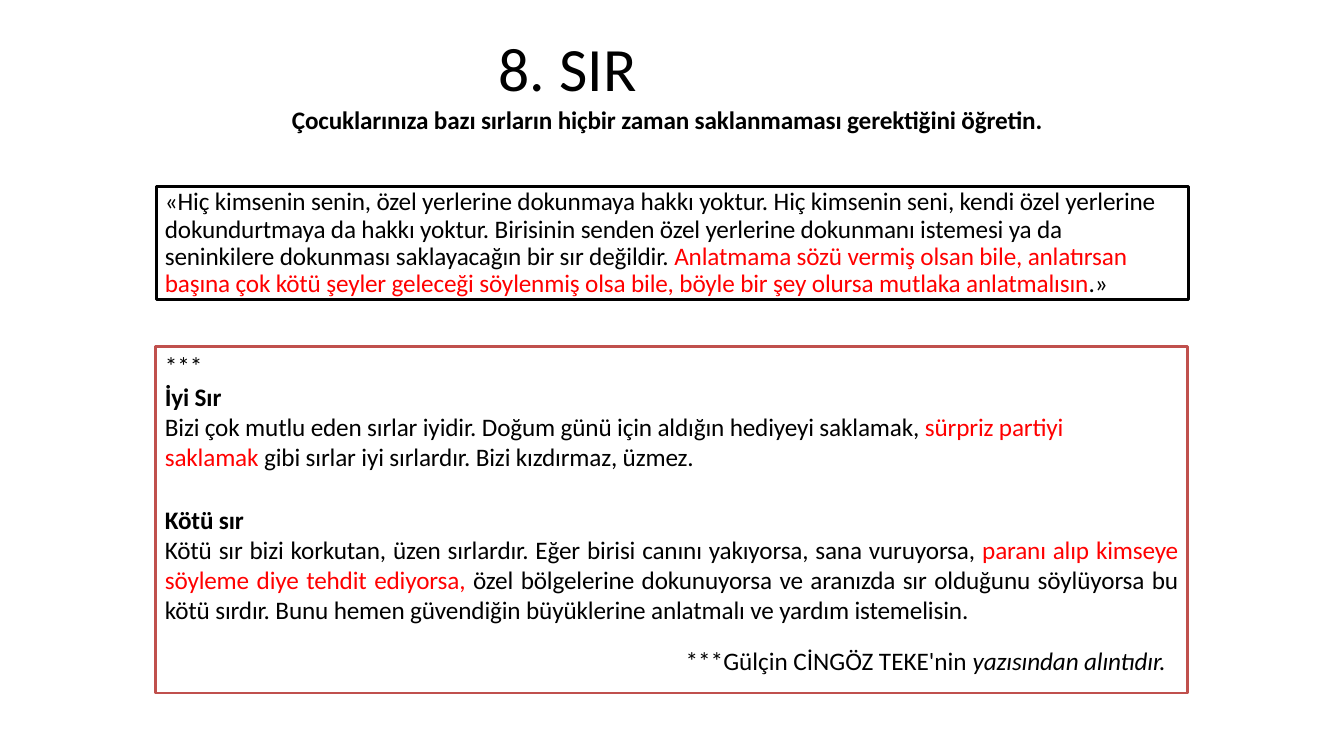
"""Builds the "8. SIR" slide about good and bad secrets."""
from pptx import Presentation
from pptx.dml.color import RGBColor
from pptx.enum.shapes import MSO_SHAPE as SHAPE
from pptx.enum.text import MSO_ANCHOR as ANCHOR, MSO_AUTO_SIZE as AUTO, PP_ALIGN as ALIGN
from pptx.util import Pt

PX = 9525
BLACK = RGBColor(0x00, 0x00, 0x00)
RED = RGBColor(0xFF, 0x00, 0x00)
BRICK = RGBColor(0xC0, 0x50, 0x4D)


def add_text(p, text, size=18, color=BLACK, bold=False, italic=False, spacing=-10):
    r = p.add_run()
    r.text = text
    r.font.name = "Calibri"
    r.font.size = Pt(size)
    r.font.color.rgb = color
    r.font.bold = bold
    r.font.italic = italic
    r._r.get_or_add_rPr().set("spc", str(spacing))


def set_frame(tf, left=1, top=0, anchor=ANCHOR.TOP):
    tf.word_wrap = True
    tf.auto_size = AUTO.NONE
    tf.vertical_anchor = anchor
    tf.margin_left, tf.margin_top = left * PX, top * PX
    tf.margin_right = tf.margin_bottom = 0
    tf.paragraphs[0].alignment = ALIGN.LEFT
    return tf


prs = Presentation()
prs.slide_width, prs.slide_height = 1280 * PX, 720 * PX
s = prs.slides.add_slide(prs.slide_layouts[5])

title = s.shapes.title
title.left, title.top, title.width, title.height = 474 * PX, 28 * PX, 305 * PX, 71 * PX
tf = set_frame(title.text_frame, anchor=ANCHOR.MIDDLE)
add_text(tf.paragraphs[0], "8. SIR", size=44, spacing=0)

subtitle = s.shapes.add_textbox(277 * PX, 99 * PX, 727 * PX, 29 * PX)
tf = set_frame(subtitle.text_frame)
add_text(tf.paragraphs[0],
         "Çocuklarınıza bazı sırların hiçbir zaman saklanmaması gerektiğini öğretin.",
         bold=True)

boxes = []
for left, top, height, color in ((149, 178, 107, BLACK), (148, 330, 330, BRICK)):
    sp = s.shapes.add_shape(SHAPE.RECTANGLE, left * PX, top * PX, 983 * PX, height * PX)
    sp.shadow.inherit = False
    sp.fill.background()
    sp.line.color.rgb = color
    sp.line.width = Pt(2.04)
    boxes.append(sp)

tf = set_frame(boxes[0].text_frame, left=8, top=2)
tf.margin_right = 20 * PX
p = tf.paragraphs[0]
p.line_spacing = 0.9
p.space_before = Pt(1.3)
add_text(p, "«Hiç kimsenin senin, özel yerlerine dokunmaya hakkı yoktur. Hiç kimsenin seni, "
            "kendi özel yerlerine dokundurtmaya da hakkı yoktur. Birisinin senden özel "
            "yerlerine dokunmanı istemesi ya da seninkilere dokunması saklayacağın bir sır "
            "değildir. ")
add_text(p, "Anlatmama sözü vermiş olsan bile, anlatırsan başına çok kötü şeyler geleceği "
            "söylenmiş olsa bile, böyle bir şey olursa mutlaka anlatmalısın", color=RED)
add_text(p, ".»")

red, bold, italic = {"color": RED}, {"bold": True}, {"italic": True}
secrets = [
    (0, [("***", {"spacing": 0})]),
    (0, [("İyi Sır", bold)]),
    (0, [("Bizi çok mutlu eden sırlar iyidir. Doğum günü için aldığın hediyeyi saklamak, ", {}),
         ("sürpriz partiyi", red)]),
    (0, [("saklamak ", red),
         ("gibi sırlar iyi sırlardır. Bizi kızdırmaz, üzmez.", {})]),
    (23, [("Kötü sır", bold)]),
    (0, [("Kötü sır bizi korkutan, üzen sırlardır. Eğer birisi canını yakıyorsa, "
          "sana vuruyorsa, ", {}),
         ("paranı alıp kimseye söyleme diye tehdit ediyorsa, ", red),
         ("özel bölgelerine dokunuyorsa ve aranızda sır olduğunu söylüyorsa bu kötü sırdır. "
          "Bunu hemen güvendiğin büyüklerine anlatmalı ve yardım istemelisin.", {})]),
    (14.8, [("***Gülçin CİNGÖZ TEKE'nin ", {"spacing": 0}),
            ("yazısından alıntıdır.", italic)]),
]
body = s.shapes.add_textbox(156 * PX, 334 * PX, 966 * PX, 310 * PX)
tf = set_frame(body.text_frame)
for i, (gap, runs) in enumerate(secrets):
    p = tf.add_paragraph() if i else tf.paragraphs[0]
    p.alignment = ALIGN.JUSTIFY
    p.space_before = Pt(gap)
    for text, style in runs:
        add_text(p, text, **style)
p.alignment = ALIGN.LEFT
p._p.get_or_add_pPr().set("marL", str(496 * PX))

prs.save("out.pptx")
